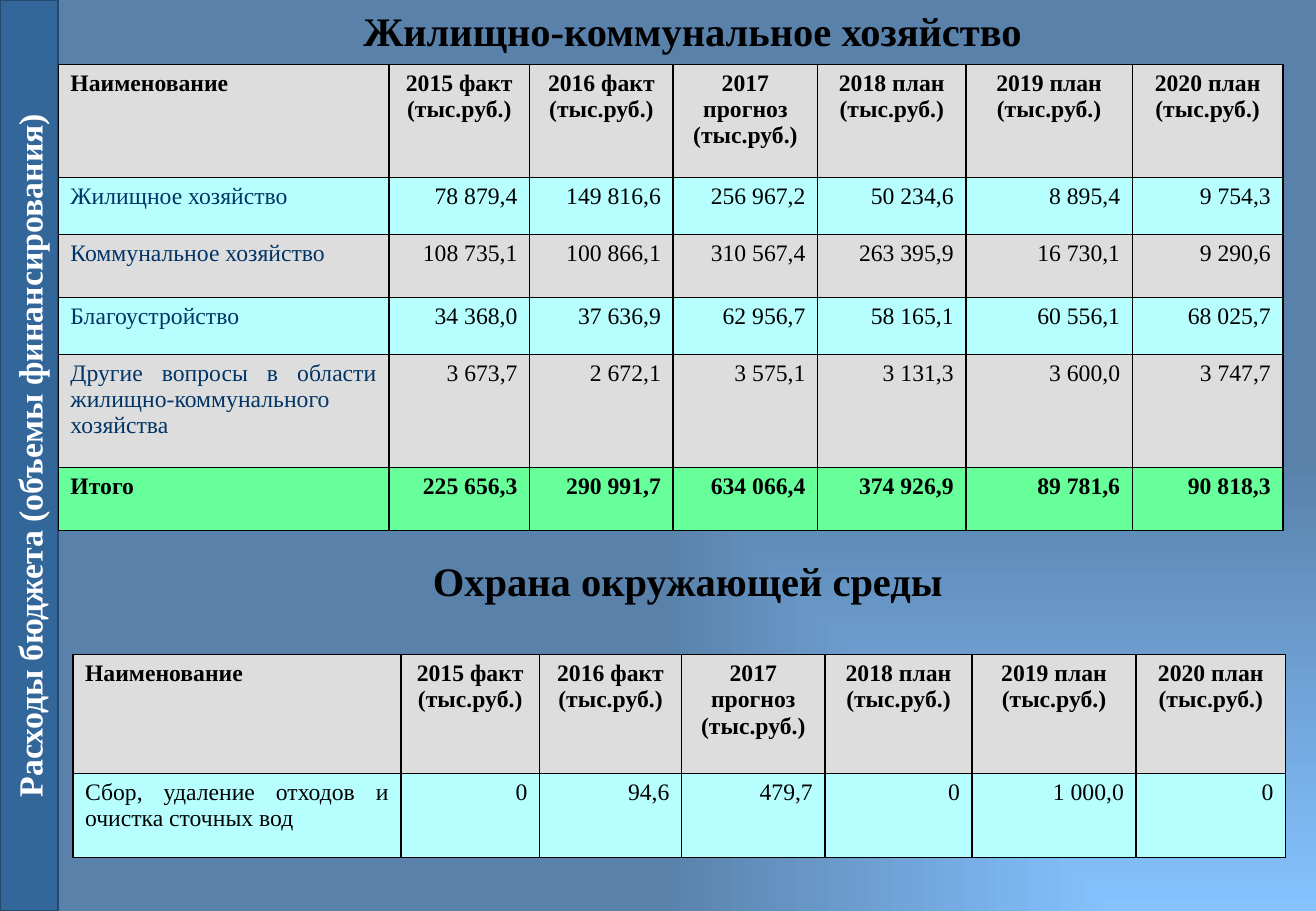
from pptx import Presentation
from pptx.dml.color import RGBColor
from pptx.enum import shapes, text
from pptx.oxml import parse_xml
from pptx.oxml.ns import nsdecls
from pptx.util import Inches, Pt

BLACK = RGBColor(0x00, 0x00, 0x00)
WHITE = RGBColor(0xFF, 0xFF, 0xFF)
NAVY = RGBColor(0x00, 0x33, 0x66)
STEEL = RGBColor(0x33, 0x66, 0x99)
STEEL_EDGE = RGBColor(0x23, 0x49, 0x6F)
GREY = RGBColor(0xDD, 0xDD, 0xDD)
AQUA = RGBColor(0xB7, 0xFF, 0xFF)
GREEN = RGBColor(0x66, 0xFF, 0x99)
ALIGN = text.PP_ALIGN


def write(frame, words, size, color, bold, align):
    para = frame.paragraphs[0]
    para.alignment = align
    span = para.add_run()
    span.text = words
    span.font.color.rgb = color
    for name, value in {"name": "Times New Roman", "size": Pt(size), "bold": bold}.items():
        setattr(span.font, name, value)


def draw_table(left, top, widths, heights, rows, fills, label_color):
    frame = page.shapes.add_table(
        len(rows), len(widths), Inches(left), Inches(top),
        Inches(sum(widths)), Inches(sum(heights)))
    table = frame.table
    for column, width in zip(table.columns, widths):
        column.width = Inches(width)
    for r, (values, height, fill) in enumerate(zip(rows, heights, fills)):
        table.rows[r].height = Inches(height)
        for c, value in enumerate(values):
            cell = table.cell(r, c)
            cell.fill.solid()
            cell.fill.fore_color.rgb = fill
            header, total = r == 0, values[0] == "Итого"
            if c == 0:
                align = ALIGN.LEFT if header else ALIGN.JUSTIFY
            else:
                align = ALIGN.CENTER if header else ALIGN.RIGHT
            plain_label = c == 0 and not header and not total
            write(cell.text_frame, value, 14, label_color if plain_label else BLACK,
                  header or total, align)
            properties = cell._tc.get_or_add_tcPr()
            for index, side in enumerate("LRTB"):
                properties.insert(index, parse_xml(
                    f'<a:ln{side} {nsdecls("a")} w="12700"><a:solidFill>'
                    f'<a:srgbClr val="{BLACK}"/></a:solidFill></a:ln{side}>'))


deck = Presentation()
deck.slide_width, deck.slide_height = Inches(10.83), Inches(7.5)
page = deck.slides.add_slide(deck.slide_layouts[5])

page._element.cSld.insert(0, parse_xml(
    f'<p:bg {nsdecls("p", "a")}><p:bgPr><a:gradFill rotWithShape="1"><a:gsLst>'
    '<a:gs pos="0"><a:srgbClr val="85C2FF"/></a:gs>'
    '<a:gs pos="100000"><a:srgbClr val="5981AA"/></a:gs></a:gsLst>'
    '<a:path path="rect"><a:fillToRect l="100000" t="100000"/></a:path>'
    '</a:gradFill><a:effectLst/></p:bgPr></p:bg>'))

sidebar = page.shapes.add_shape(
    shapes.MSO_SHAPE.RECTANGLE, Inches(-3.51), Inches(3.51), Inches(7.5), Inches(0.48))
sidebar.rotation = 270
sidebar.shadow.inherit = False
sidebar.fill.solid()
sidebar.fill.fore_color.rgb = STEEL
sidebar.line.color.rgb = STEEL_EDGE
sidebar.line.width = Pt(1)
sidebar.text_frame.vertical_anchor = text.MSO_ANCHOR.MIDDLE
write(sidebar.text_frame, "Расходы бюджета (объемы финансирования)", 20, WHITE, True, ALIGN.CENTER)

header = ["Наименование", "2015 факт (тыс.руб.)", "2016 факт (тыс.руб.)",
          "2017 прогноз (тыс.руб.)", "2018 план (тыс.руб.)",
          "2019 план (тыс.руб.)", "2020 план (тыс.руб.)"]
housing = [
    header,
    ["Жилищное хозяйство", "78 879,4", "149 816,6", "256 967,2", "50 234,6", "8 895,4", "9 754,3"],
    ["Коммунальное хозяйство", "108 735,1", "100 866,1", "310 567,4", "263 395,9", "16 730,1", "9 290,6"],
    ["Благоустройство", "34 368,0", "37 636,9", "62 956,7", "58 165,1", "60 556,1", "68 025,7"],
    ["Другие вопросы в области жилищно-коммунального хозяйства",
     "3 673,7", "2 672,1", "3 575,1", "3 131,3", "3 600,0", "3 747,7"],
    ["Итого", "225 656,3", "290 991,7", "634 066,4", "374 926,9", "89 781,6", "90 818,3"],
]
environment = [
    header,
    ["Сбор, удаление отходов и очистка сточных вод", "0", "94,6", "479,7", "0", "1 000,0", "0"],
]
draw_table(0.48, 0.53, [2.72, 1.16, 1.18, 1.19, 1.22, 1.37, 1.24],
           [0.93, 0.47, 0.52, 0.47, 0.93, 0.52], housing,
           [GREY, AQUA, GREY, AQUA, GREY, GREEN], NAVY)
draw_table(0.6, 5.39, [2.7, 1.14, 1.17, 1.18, 1.21, 1.35, 1.23],
           [0.98, 0.69], environment, [GREY, AQUA], BLACK)

subtitle = page.shapes.add_textbox(0, 0, 0, 0)
headings = [(page.shapes.title, 0.81, 0, "Жилищно-коммунальное хозяйство"),
            (subtitle, 0.77, 4.53, "Охрана окружающей среды")]
for box, left, top, words in headings:
    place = {"left": left, "top": top, "width": 9.78, "height": 0.5}
    for name, value in place.items():
        setattr(box, name, Inches(value))
    settings = {"word_wrap": True, "auto_size": text.MSO_AUTO_SIZE.NONE,
                "vertical_anchor": text.MSO_ANCHOR.MIDDLE}
    for name, value in settings.items():
        setattr(box.text_frame, name, value)
    write(box.text_frame, words, 24, BLACK, True, ALIGN.CENTER)

deck.save("out.pptx")
